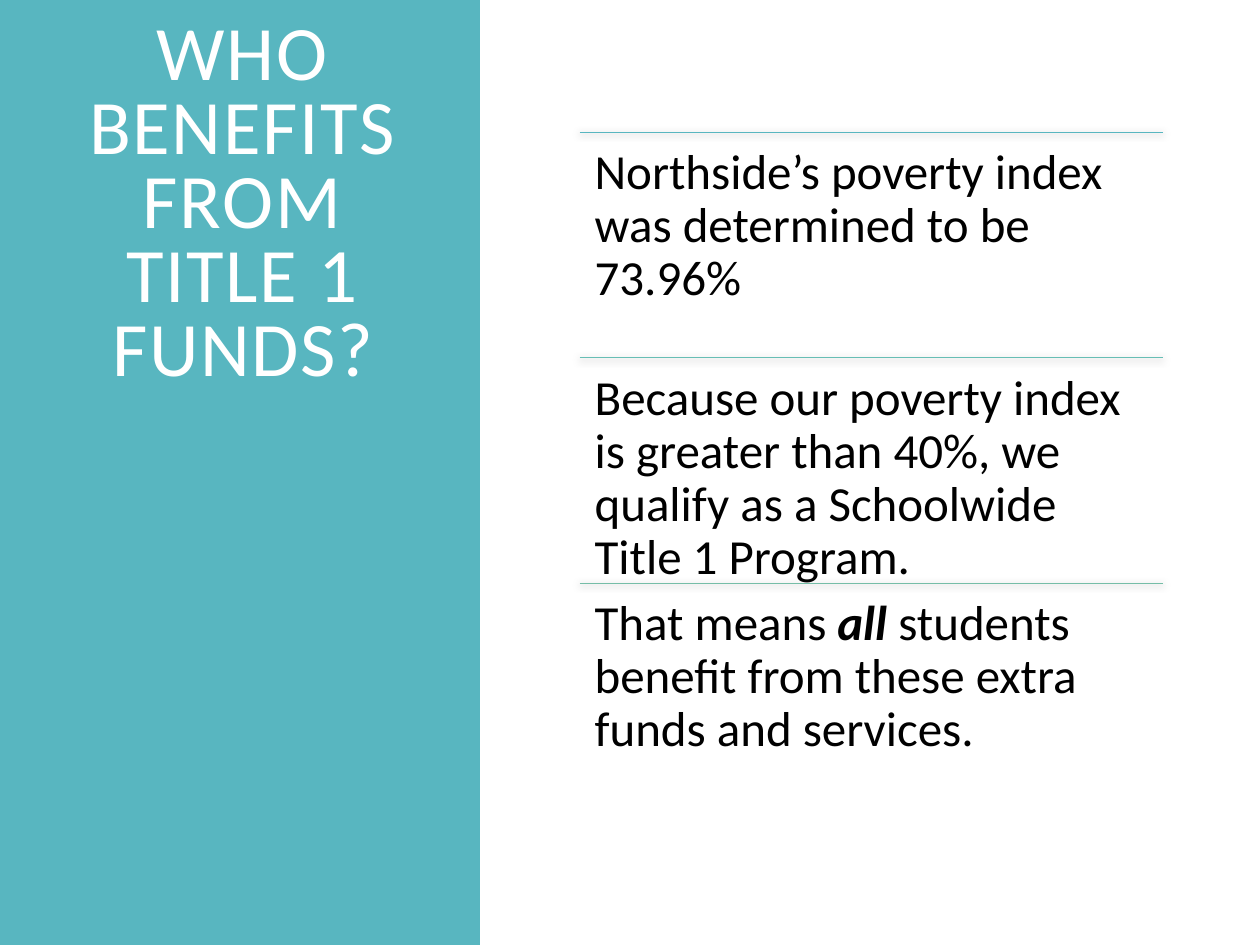
"""Build the slide on who benefits from Title 1 funds."""
from lxml.etree import SubElement
from pptx import Presentation
from pptx.dml.color import RGBColor
from pptx.enum.shapes import MSO_CONNECTOR as Link, MSO_SHAPE as Shape
from pptx.enum.text import MSO_ANCHOR as Anchor, MSO_AUTO_SIZE as Fit, PP_ALIGN as Align
from pptx.oxml.ns import qn
from pptx.util import Inches, Pt

TEAL = RGBColor(0x58, 0xB6, 0xC0)
AQUA = RGBColor(0x67, 0xBE, 0xB5)
SAGE = RGBColor(0x75, 0xBD, 0xA7)
WHITE = RGBColor(0xFF, 0xFF, 0xFF)
BLACK = RGBColor(0, 0, 0)

LEFT, TOP, WIDTH, STEP = 4.6, 1.05, 4.63, 1.79
POINTS = [
    (TEAL, ["Northside’s poverty index was determined to be 73.96%"]),
    (AQUA, ["Because our poverty index is greater than 40%, we qualify "
            "as a Schoolwide Title 1 Program."]),
    (SAGE, ["That means ", "all", " students benefit from these extra funds and services."]),
]


class Deck:
    """Hold the style and the current slide."""

    face = "Calibri"

    def __init__(self):
        self.prs = Presentation()
        self.prs.slide_width, self.prs.slide_height = Inches(10), Inches(7.5)
        self.slide = self.prs.slides.add_slide(self.prs.slide_layouts[5])

    def style(self, para, size, color, space):
        para.font.name, para.font.size = self.face, Pt(size)
        para.font.color.rgb = color
        para.line_spacing = space

    def panel(self, x, y, w, h, color):
        box = self.slide.shapes.add_shape(
            Shape.RECTANGLE, Inches(x), Inches(y), Inches(w), Inches(h))
        box.shadow.inherit = False
        box.fill.solid()
        box.fill.fore_color.rgb = color
        box.line.fill.background()
        tree = self.slide.shapes.element
        tree.remove(box.element)
        tree.insert(2, box.element)

    def title(self, x, y, w, h, text):
        box = self.slide.shapes.title
        box.left, box.top, box.width, box.height = map(Inches, (x, y, w, h))
        frame = box.text_frame
        frame.text = text
        frame.word_wrap, frame.auto_size = True, Fit.NONE
        frame.vertical_anchor = Anchor.TOP
        para = frame.paragraphs[0]
        para.alignment = Align.CENTER
        self.style(para, 44, WHITE, 0.8)
        para.runs[0].font.element.set("spc", "100") if hasattr(
            para.runs[0].font, "element") else para.runs[0]._r.get_or_add_rPr().set("spc", "100")

    def rule(self, x, y, w, color):
        line = self.slide.shapes.add_connector(
            Link.STRAIGHT, Inches(x), Inches(y), Inches(x + w), Inches(y))
        line.line.color.rgb, line.line.width = color, Pt(0.75)
        glow = SubElement(line.element.spPr, qn("a:effectLst"))
        shade = SubElement(glow, qn("a:outerShdw"), blurRad=str(Pt(4)),
                           dist=str(Pt(1)), dir="5400000", rotWithShape="0")
        tint = SubElement(shade, qn("a:srgbClr"), val=str(BLACK))
        SubElement(tint, qn("a:alpha"), val="50000")

    def text(self, x, y, w, h, parts):
        box = self.slide.shapes.add_textbox(Inches(x), Inches(y), Inches(w), Inches(h))
        frame = box.text_frame
        frame.word_wrap = True
        frame.margin_left = frame.margin_right = Inches(0.12)
        frame.margin_top = frame.margin_bottom = Inches(0.12)
        para = frame.paragraphs[0]
        self.style(para, 28, BLACK, 0.9)
        for part in parts:
            run = para.add_run()
            run.text = part
            if part == "all":
                run.font.bold = run.font.italic = True


def main():
    deck = Deck()
    deck.panel(0, 0, 3.81, 7.5, TEAL)
    deck.title(0.53, 0.12, 2.8, 6.67, "WHO BENEFITS FROM TITLE 1 FUNDS?")
    for row, (color, parts) in enumerate(POINTS):
        y = TOP + row * STEP
        deck.rule(LEFT, y, WIDTH, color)
        deck.text(LEFT, y, WIDTH, STEP, parts)
    deck.prs.save("out.pptx")


if __name__ == "__main__":
    main()
